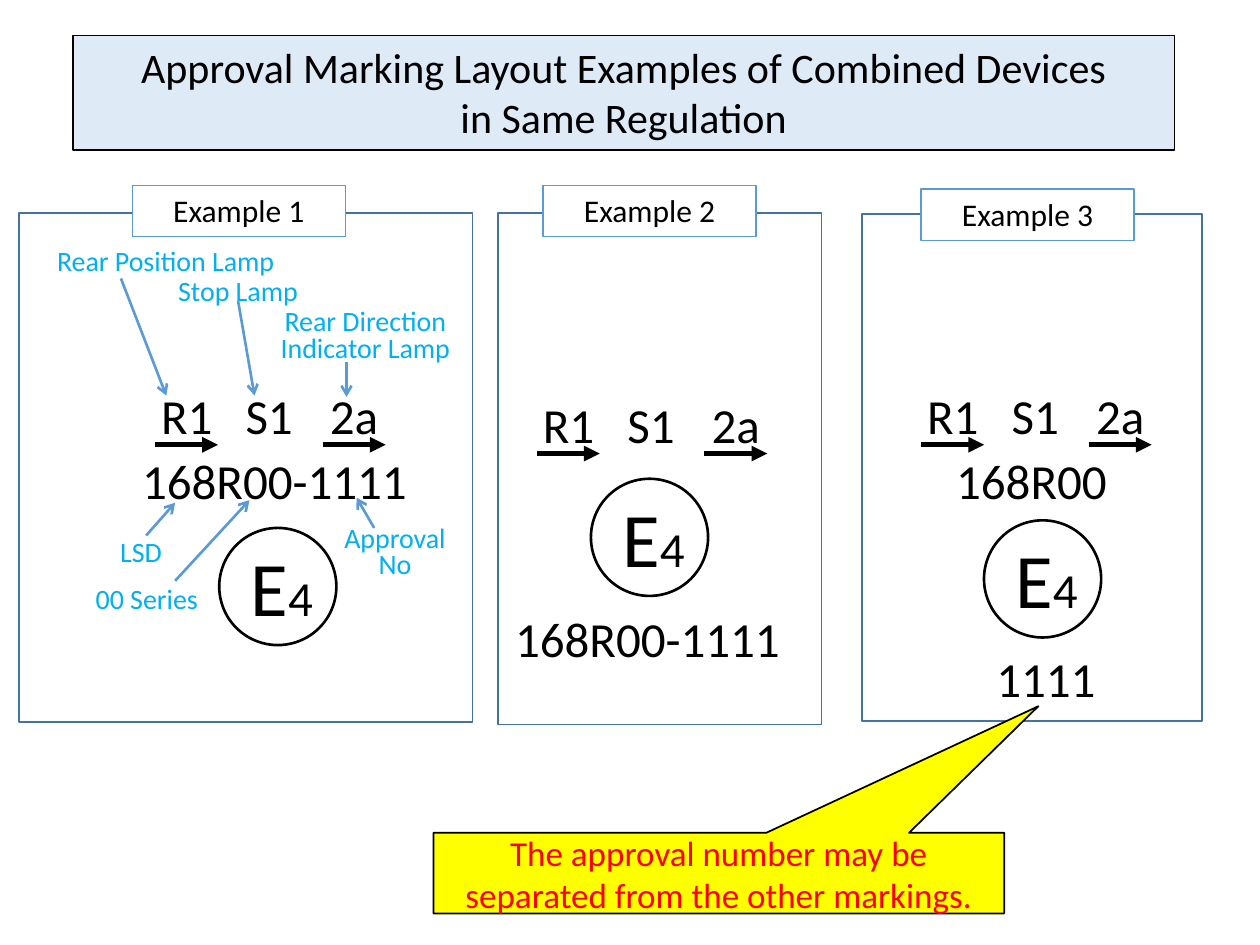
from lxml import etree
from pptx import Presentation
from pptx.dml.color import RGBColor
from pptx.enum.shapes import MSO_CONNECTOR, MSO_SHAPE
from pptx.enum.text import MSO_ANCHOR, MSO_AUTO_SIZE, PP_ALIGN
from pptx.oxml.ns import qn
from pptx.util import Inches, Pt

LINE = MSO_CONNECTOR.STRAIGHT
RECT, OVAL = MSO_SHAPE.RECTANGLE, MSO_SHAPE.OVAL
CALLOUT = MSO_SHAPE.RECTANGULAR_CALLOUT
LEFT, CENTER = PP_ALIGN.LEFT, PP_ALIGN.CENTER
TOP, MIDDLE = MSO_ANCHOR.TOP, MSO_ANCHOR.MIDDLE
FIXED = MSO_AUTO_SIZE.NONE
FONT = "Calibri"
COLORS = {
    "ink": "000000", "title": "DEEBF7", "frame": "43739E", "blue": "5B9BD5",
    "label": "00B0F0", "note": "FFFF00", "red": "FF0000", "white": "FFFFFF",
}


def color(name):
    return RGBColor.from_string(COLORS[name])


def style_run(run, size, ink):
    run.font.name = FONT
    run.font.size = Pt(size)
    run.font.color.rgb = color(ink)


def set_text(shape, text, size, ink="ink", align=CENTER, anchor=TOP, wrap=True, leads=()):
    frame = shape.text_frame
    frame.text = text
    frame.word_wrap = wrap
    frame.auto_size = FIXED
    frame.vertical_anchor = anchor
    for par in frame.paragraphs:
        par.alignment = align
        for run in par.runs:
            style_run(run, size, ink)
    for par, lead in zip(frame.paragraphs, leads):
        par.line_spacing = Pt(lead)


def set_look(shape, fill, line, width):
    if fill:
        shape.fill.solid()
        shape.fill.fore_color.rgb = color(fill)
    else:
        shape.fill.background()
    shape.line.color.rgb = color(line)
    shape.line.width = Pt(width)


def add_box(shapes, kind, at, fill, line, width):
    shape = shapes.add_shape(kind, *map(Inches, at))
    shape.shadow.inherit = False
    set_look(shape, fill, line, width)
    return shape


def add_text(shapes, at, text, size, **look):
    box = shapes.add_textbox(*map(Inches, at))
    set_text(box, text, size, **look)
    return box


def add_arrow(shapes, start, end, ink, width, head):
    line = shapes.add_connector(LINE, *map(Inches, start + end))
    line.line.color.rgb = color(ink)
    line.line.width = Pt(width)
    tip = etree.SubElement(line.line._get_or_add_ln(), qn("a:tailEnd"))
    tip.set("type", head)
    etree.SubElement(line._element.spPr, qn("a:effectLst"))


def add_code(shapes, x, y, width, text):
    add_text(shapes, (x, y, width, 0.52), text, 28, align=LEFT, wrap=False, leads=[30])


def add_marks(shapes, x, y):
    """Lamp symbols, with arrows under the first and the last."""
    for step, width, text in ((0, 0.62, "R1"), (0.67, 0.58, "S1"), (1.34, 0.59, "2a")):
        add_code(shapes, x + step, y, width, text)
    for step in (0.05, 1.38):
        start = (x + step, y + 0.47)
        add_arrow(shapes, start, (start[0] + 0.5, start[1]), "ink", 3, "triangle")


def add_badge(shapes, x, y):
    """Circled E4 mark."""
    box = add_text(shapes, (x + 0.15, y + 0.04, 1.07, 0.84), "E", 44, align=LEFT)
    run = box.text_frame.paragraphs[0].add_run()
    run.text = "4"
    style_run(run, 28, "ink")
    add_box(shapes, OVAL, (x, y, 0.93, 0.93), None, "ink", 1.5)


def add_labels(shapes):
    """Blue explanations and their pointers in the first example."""
    labels = (
        ((0.34, 1.83, 1.95, 0.42), "Rear Position Lamp", [23], False),
        ((1.31, 2.07, 1.16, 0.42), "Stop Lamp", [23], False),
        ((2.12, 2.31, 1.56, 0.63), "Rear Direction\nIndicator Lamp", [23, 15], False),
        ((0.62, 4.14, 1, 0.42), "LSD", [23], True),
        ((0.59, 4.51, 1.15, 0.42), "00 Series", [23], True),
        ((2.56, 4.14, 1.15, 0.53), "Approval No", [15], True),
    )
    for at, text, leads, wrap in labels:
        add_text(shapes, at, text, 16, ink="label", wrap=wrap, leads=leads)
    pointers = (
        ((0.96, 2.21), (1.32, 3.14)), ((1.89, 2.39), (2.02, 3.14)),
        ((2.75, 2.87), (2.75, 3.15)), ((1.16, 4.25), (1.39, 3.99)),
        ((1.39, 4.61), (1.98, 3.97)), ((2.97, 4.19), (2.83, 3.95)),
    )
    for start, end in pointers:
        add_arrow(shapes, start, end, "blue", 1.5, "arrow")


def add_title(slide):
    title = slide.shapes.title
    title.left, title.top, title.width, title.height = map(Inches, (0.58, 0.28, 8.74, 0.91))
    set_look(title, "title", "ink", 0.75)
    text = "Approval Marking Layout Examples of Combined Devices\nin Same Regulation"
    set_text(title, text, 24)


def main():
    prs = Presentation()
    prs.slide_width, prs.slide_height = Inches(10), Inches(7.5)
    slide = prs.slides.add_slide(prs.slide_layouts[5])
    add_title(slide)

    # Examples: frame, badge, marks, codes
    examples = (
        ((0.15, 1.69, 3.6, 4.04), (1.74, 4.19), (1.18, 3.06),
         [(1.03, 3.58, 2.34, "168R00-1111")]),
        ((3.95, 1.69, 2.57, 4.06), (4.69, 3.8), (4.21, 3.13),
         [(3.99, 4.83, 2.34, "168R00-1111")]),
        ((6.84, 1.7, 2.7, 4.02), (7.81, 4.13), (7.26, 3.06),
         [(7.49, 3.58, 1.42, "168R00"), (7.81, 5.15, 1, "1111")]),
    )
    for num, (frame, badge, marks, codes) in enumerate(examples):
        shapes = slide.shapes.add_group_shape().shapes
        add_badge(shapes, *badge)
        for code in codes:
            add_code(shapes, *code)
        add_marks(shapes, *marks)
        if num == 0:
            add_labels(shapes)
        add_box(shapes, RECT, frame, None, "frame", 1)

    # Callout
    note = add_box(slide.shapes, CALLOUT, (3.44, 6.61, 4.53, 0.64), "note", "ink", 1)
    note.adjustments[0], note.adjustments[1] = 0.56, -2.07
    text = "The approval number may be separated from the other markings."
    set_text(note, text, 20, ink="red", anchor=MIDDLE)

    # Example names
    for num, (x, y) in enumerate(((1.05, 1.47), (4.31, 1.47), (7.31, 1.5)), 1):
        tag = add_box(slide.shapes, RECT, (x, y, 1.69, 0.41), "white", "blue", 0.75)
        set_text(tag, f"Example {num}", 18)

    prs.save("out.pptx")


if __name__ == "__main__":
    main()
